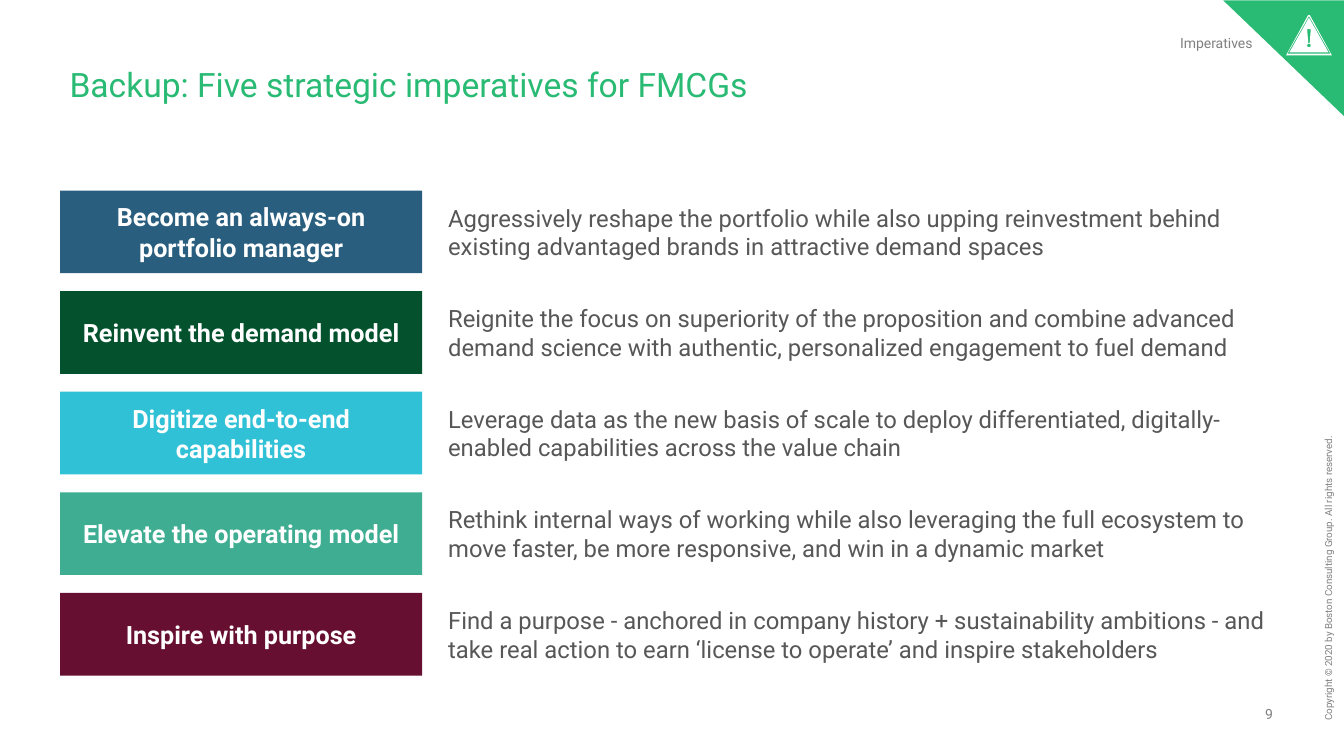
from math import cos, pi, sin
from pptx import Presentation
from pptx.dml.color import RGBColor
from pptx.enum.shapes import MSO_SHAPE
from pptx.enum.text import MSO_ANCHOR, PP_ALIGN
from pptx.util import Pt

RECTANGLE = MSO_SHAPE.RECTANGLE
TRIANGLE = MSO_SHAPE.ISOSCELES_TRIANGLE
TOP, MIDDLE, BOTTOM = MSO_ANCHOR.TOP, MSO_ANCHOR.MIDDLE, MSO_ANCHOR.BOTTOM
LEFT, CENTER, RIGHT = PP_ALIGN.LEFT, PP_ALIGN.CENTER, PP_ALIGN.RIGHT

WHITE = RGBColor(0xFF, 0xFF, 0xFF)
GREEN = RGBColor(0x29, 0xBA, 0x74)
GRAY = RGBColor(0x80, 0x80, 0x80)
BODY = RGBColor(0x57, 0x57, 0x57)
BLUE = RGBColor(0x29, 0x5E, 0x7E)
FOREST = RGBColor(0x03, 0x52, 0x2D)
CYAN = RGBColor(0x30, 0xC1, 0xD7)
TEAL = RGBColor(0x3E, 0xAD, 0x92)
BURGUNDY = RGBColor(0x67, 0x0F, 0x31)

NO_INSETS = (0, 0, 0, 0)
BOX_INSETS = (7.2, 3.6, 7.2, 3.6)
ROW_TOP, ROW_PITCH, ROW_HEIGHT = 136.1, 71.85, 59.1

IMPERATIVES = [
    ("Become an always-on\nportfolio manager", BLUE, 584.6,
     "Aggressively reshape the portfolio while also upping reinvestment behind "
     "existing advantaged brands in attractive demand spaces"),
    ("Reinvent the demand model", FOREST, 584.6,
     "Reignite the focus on superiority of the proposition and combine advanced "
     "demand science with authentic, personalized engagement to fuel demand"),
    ("Digitize end-to-end capabilities", CYAN, 584.6,
     "Leverage data as the new basis of scale to deploy differentiated, "
     "digitally-enabled capabilities across the value chain"),
    ("Elevate the operating model", TEAL, 584.6,
     "Rethink internal ways of working while also leveraging the full ecosystem "
     "to move faster, be more responsive, and win in a dynamic market"),
    ("Inspire with purpose", BURGUNDY, 603.4,
     "Find a purpose - anchored in company history + sustainability ambitions - "
     "and take real action to earn ‘license to operate’ and inspire stakeholders"),
]


class SlideBuilder:
    font_name = "Roboto"

    def __init__(self, page):
        self.page = page

    def label(self, shape, text, size, color, bold=False, align=LEFT,
              anchor=MIDDLE, insets=BOX_INSETS, line_spacing=None):
        frame = shape.text_frame
        frame.text = text
        frame.word_wrap = True
        frame.vertical_anchor = anchor
        (frame.margin_left, frame.margin_top,
         frame.margin_right, frame.margin_bottom) = map(Pt, insets)
        for para in frame.paragraphs:
            para.alignment = align
            if line_spacing:
                para.line_spacing = line_spacing
            for span in para.runs:
                span.font.name = self.font_name
                span.font.size = Pt(size)
                span.font.bold = bold
                span.font.color.rgb = color

    def paint(self, shape, color):
        shape.shadow.inherit = False
        shape.fill.solid()
        shape.fill.fore_color.rgb = color
        shape.line.fill.background()

    def text(self, bounds, text, size, color, rotation=0, **style):
        box = self.page.shapes.add_textbox(*map(Pt, bounds))
        box.rotation = rotation
        self.label(box, text, size, color, **style)

    def shape(self, kind, bounds, color):
        shape = self.page.shapes.add_shape(kind, *map(Pt, bounds))
        self.paint(shape, color)
        return shape

    def outline(self, contours, color):
        first, *others = [[(Pt(x), Pt(y)) for x, y in contour] for contour in contours]
        builder = self.page.shapes.build_freeform(*first[0])
        builder.add_line_segments(first[1:])
        for contour in others:
            builder.move_to(*contour[0])
            builder.add_line_segments(contour[1:])
        self.paint(builder.convert_to_shape(), color)


def trapezoid(center, top, bottom, top_half, bottom_half):
    return [(center - top_half, top), (center + top_half, top),
            (center + bottom_half, bottom), (center - bottom_half, bottom)]


def warning_contours(center):
    dot = [(center + 1.3 * cos(step * pi / 8), 32.5 + 1.3 * sin(step * pi / 8))
           for step in range(16)]
    return [
        trapezoid(center, 10.8, 39.6, 0.6, 16.4),
        trapezoid(center, 11.7, 38.4, 0.1, 15.4),
        trapezoid(center, 13, 37.5, 0.2, 14),
        trapezoid(center, 20.9, 30.8, 1.3, 0.5),
        dot,
    ]


def main():
    deck = Presentation()
    deck.slide_width, deck.slide_height = Pt(960), Pt(540)
    slide = SlideBuilder(deck.slides.add_slide(deck.slide_layouts[6]))

    slide.text((879.1, 504, 30.2, 12.2), "9", 10, GRAY,
               align=RIGHT, anchor=BOTTOM, insets=NO_INSETS)
    slide.text((747.4, 308.9, 403.9, 7.9),
               "Copyright © 2020 by Boston Consulting Group. All rights reserved.",
               7, GRAY, rotation=270, anchor=TOP, insets=NO_INSETS, line_spacing=0.9)
    slide.text((49.7, 49, 861.1, 25.9), "Backup: Five strategic imperatives for FMCGs",
               24, GREEN, anchor=TOP, insets=NO_INSETS, line_spacing=0.9)

    for row, (name, color, width, description) in enumerate(IMPERATIVES):
        top = ROW_TOP + row * ROW_PITCH
        tile = slide.shape(RECTANGLE, (43, top, 258.5, ROW_HEIGHT), color)
        slide.label(tile, name, 18, WHITE, bold=True, align=CENTER)
        slide.text((313, top, width, ROW_HEIGHT), description, 17, BODY)

    corner = slide.shape(TRIANGLE, (875.5, -1.6, 82.8, 86.4), GREEN)
    corner.adjustments[0] = 1
    corner.rotation = 270
    slide.text((791.3, 20.2, 104.1, 20.2), "Imperatives", 10, GRAY,
               align=RIGHT, insets=(0, 0, 0.7, 0))
    slide.outline(warning_contours(935), WHITE)

    deck.save("out.pptx")


if __name__ == "__main__":
    main()
